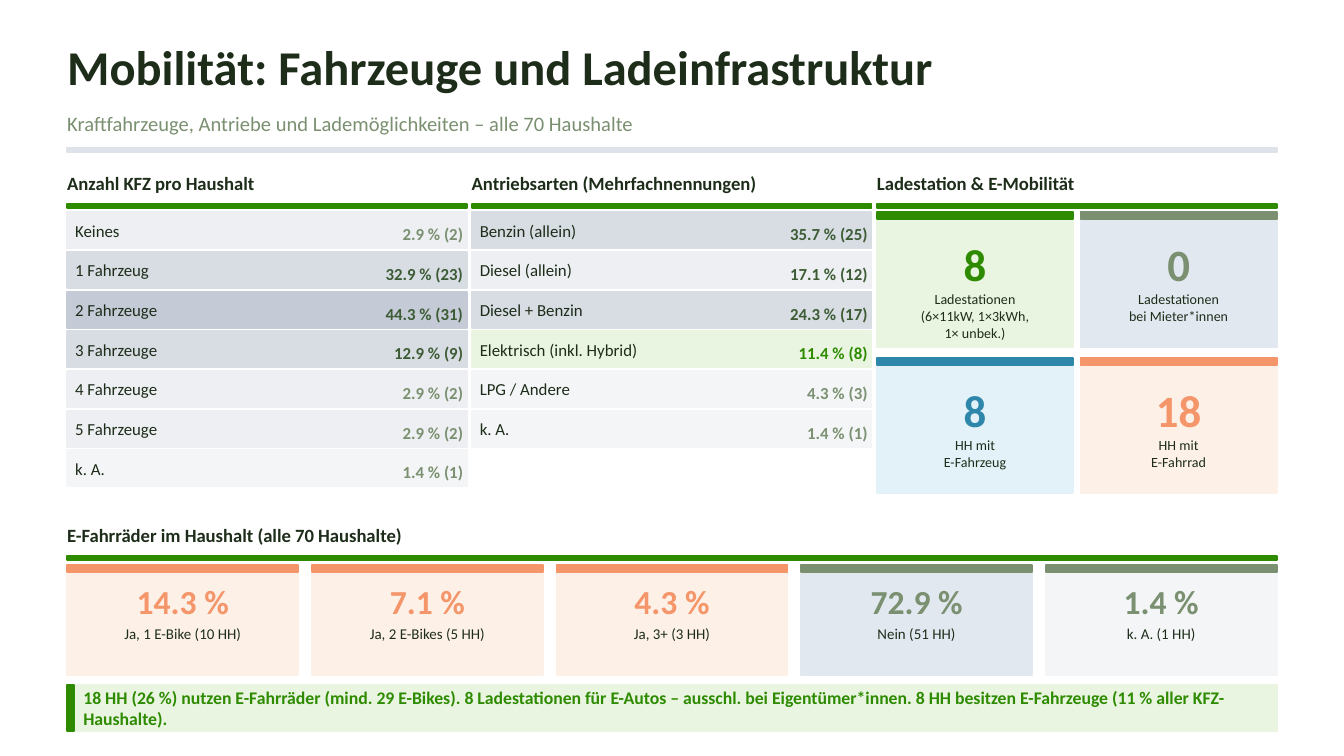
"""Build the slide on vehicles and charging points in 70 households."""
import pptx
import pptx.dml.color
import pptx.enum.shapes
import pptx.enum.text
import pptx.util

PX = 4572
INK = {
    "dark": "1D2D1A", "moss": "3D5C35", "sage": "7A9070", "green": "2E8B00",
    "blue": "2E86AB", "peach": "F4956A", "rule": "DDE3E8", "mist": "F4F5F7",
    "light": "EDEFF2", "mid": "D8DCE3", "deep": "C5CBD6", "lime": "E9F5E1",
    "slate": "E2E8F0", "sky": "E3F2F8", "cream": "FDF0E7",
}
ALIGN = pptx.enum.text.PP_ALIGN
ANCHOR = pptx.enum.text.MSO_ANCHOR


class Deck:
    """Hold the style and the current slide."""

    def __init__(self, wide, high):
        self.file = pptx.Presentation()
        self.file.slide_width = wide * PX
        self.file.slide_height = high * PX
        self.slide = self.file.slides.add_slide(self.file.slide_layouts[6])
        self.font = "Calibri"

    def tone(self, name):
        return pptx.dml.color.RGBColor.from_string(INK[name])

    def rect(self, x, y, w, h, ink):
        kind = pptx.enum.shapes.MSO_SHAPE.RECTANGLE
        box = self.slide.shapes.add_shape(kind, x * PX, y * PX, w * PX, h * PX)
        box.shadow.inherit = False
        box.fill.solid()
        box.fill.fore_color.rgb = self.tone(ink)
        box.line.color.rgb = self.tone(ink)
        box.line.width = pptx.util.Pt(1)

    def text(self, x, y, w, h, words, size, ink="dark", bold=False,
             align=ALIGN.LEFT, anchor=ANCHOR.MIDDLE, top=0):
        box = self.slide.shapes.add_textbox(x * PX, y * PX, w * PX, h * PX)
        frame = box.text_frame
        form = {"word_wrap": True, "vertical_anchor": anchor, "margin_left": 0,
                "margin_top": top * PX, "margin_right": 0, "margin_bottom": 0}
        for key, value in form.items():
            setattr(frame, key, value)
        look = {"name": self.font, "size": pptx.util.Pt(size), "bold": bold}
        frame.text = words
        for para in frame.paragraphs:
            para.alignment = align
            for run in para.runs:
                for key, value in look.items():
                    setattr(run.font, key, value)
                run.font.color.rgb = self.tone(ink)

    def head(self, x, y, w, words):
        self.text(x, y, w, 56, words, 10, bold=True)
        self.rect(x, y + 60, w, 6, "green")

    def row(self, x, y, label, value, fill, ink):
        self.rect(x, y, 595, 54, fill)
        self.text(x + 12, y, 357, 54, label, 9)
        self.text(x + 357, y, 232, 54, value, 9, ink, True, ALIGN.RIGHT,
                  top=11)

    def card(self, x, y, value, label, fill, ink, form):
        wide = form["wide"]
        self.rect(x, y, wide, form["high"], fill)
        self.rect(x, y, wide, 10, ink)
        self.text(x, y + 11, wide, form["tall"], value, form["big"],
                  ink, True, ALIGN.CENTER, ANCHOR.BOTTOM)
        self.text(x, y + form["sub"], wide, form["rest"], label, form["small"],
                  align=ALIGN.CENTER, anchor=ANCHOR.TOP)


LISTS = [
    ("Anzahl KFZ pro Haushalt", [
        ("Keines", "2.9 % (2)", "light", "sage"),
        ("1 Fahrzeug", "32.9 % (23)", "mid", "moss"),
        ("2 Fahrzeuge", "44.3 % (31)", "deep", "moss"),
        ("3 Fahrzeuge", "12.9 % (9)", "mid", "moss"),
        ("4 Fahrzeuge", "2.9 % (2)", "light", "sage"),
        ("5 Fahrzeuge", "2.9 % (2)", "light", "sage"),
        ("k. A.", "1.4 % (1)", "mist", "sage"),
    ]),
    ("Antriebsarten (Mehrfachnennungen)", [
        ("Benzin (allein)", "35.7 % (25)", "mid", "moss"),
        ("Diesel (allein)", "17.1 % (12)", "light", "moss"),
        ("Diesel + Benzin", "24.3 % (17)", "mid", "moss"),
        ("Elektrisch (inkl. Hybrid)", "11.4 % (8)", "lime", "green"),
        ("LPG / Andere", "4.3 % (3)", "mist", "sage"),
        ("k. A.", "1.4 % (1)", "mist", "sage"),
    ]),
    ("Ladestation & E-Mobilität", []),
]
POWER = [
    ("8", "Ladestationen\n(6×11kW, 1×3kWh,\n1× unbek.)", "lime", "green"),
    ("0", "Ladestationen\nbei Mieter*innen", "slate", "sage"),
    ("8", "HH mit\nE-Fahrzeug", "sky", "blue"),
    ("18", "HH mit\nE-Fahrrad", "cream", "peach"),
]
BIKES = [
    ("14.3 %", "Ja, 1 E-Bike (10 HH)", "cream", "peach"),
    ("7.1 %", "Ja, 2 E-Bikes (5 HH)", "cream", "peach"),
    ("4.3 %", "Ja, 3+ (3 HH)", "cream", "peach"),
    ("72.9 %", "Nein (51 HH)", "slate", "sage"),
    ("1.4 %", "k. A. (1 HH)", "mist", "sage"),
]
LARGE = {"wide": 292, "high": 201, "tall": 105, "big": 24,
         "sub": 117, "rest": 78, "small": 7.5}
SMALL = {"wide": 344, "high": 164, "tall": 72, "big": 18,
         "sub": 89, "rest": 66, "small": 8}


def main():
    deck = Deck(2000, 1125)
    deck.text(100, 44, 1800, 110, "Mobilität: Fahrzeuge und Ladeinfrastruktur",
              26, bold=True)
    deck.text(100, 156, 1800, 56, "Kraftfahrzeuge, Antriebe und "
              "Lademöglichkeiten – alle 70 Haushalte", 11, "sage")
    deck.rect(100, 220, 1800, 6, "rule")

    for col, (title, rows) in enumerate(LISTS):
        x = 100 + 1205 * col // 2
        deck.head(x, 244, 595, title)
        for num, row in enumerate(rows):
            deck.row(x, 316 + 59 * num, *row)

    for num, card in enumerate(POWER):
        deck.card(1305 + 303 * (num % 2), 316 + 217 * (num // 2), *card, LARGE)

    deck.head(100, 768, 1800, "E-Fahrräder im Haushalt (alle 70 Haushalte)")
    for num, card in enumerate(BIKES):
        deck.card(100 + 364 * num, 841, *card, SMALL)

    deck.rect(100, 1020, 1800, 68, "lime")
    deck.rect(100, 1020, 10, 68, "green")
    deck.text(124, 1022, 1750, 64, "18 HH (26 %) nutzen E-Fahrräder (mind. 29 "
              "E-Bikes). 8 Ladestationen für E-Autos – ausschl. bei "
              "Eigentümer*innen. 8 HH besitzen E-Fahrzeuge (11 % aller "
              "KFZ-Haushalte).", 9.5, "green", True)
    deck.file.save("out.pptx")


if __name__ == "__main__":
    main()
